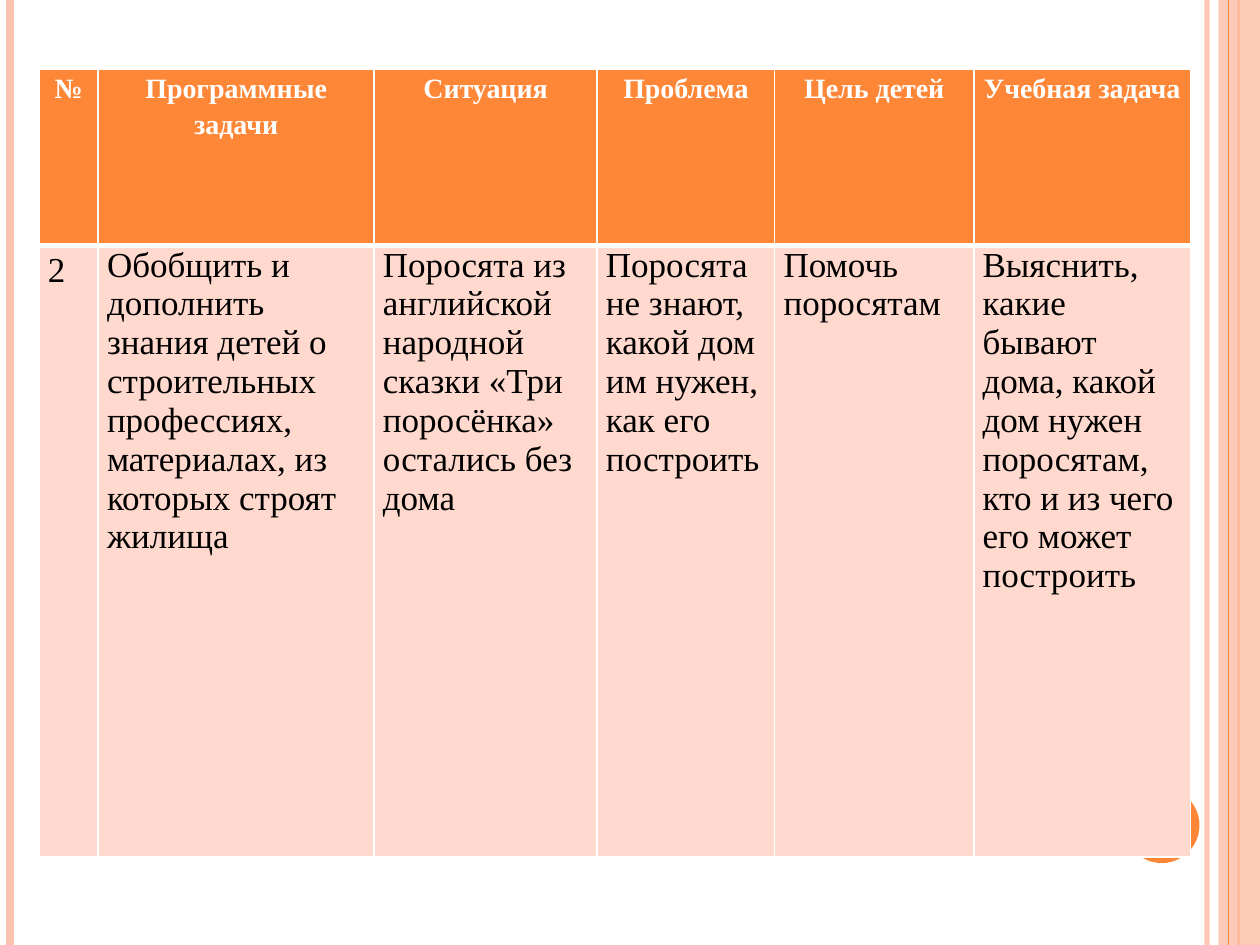
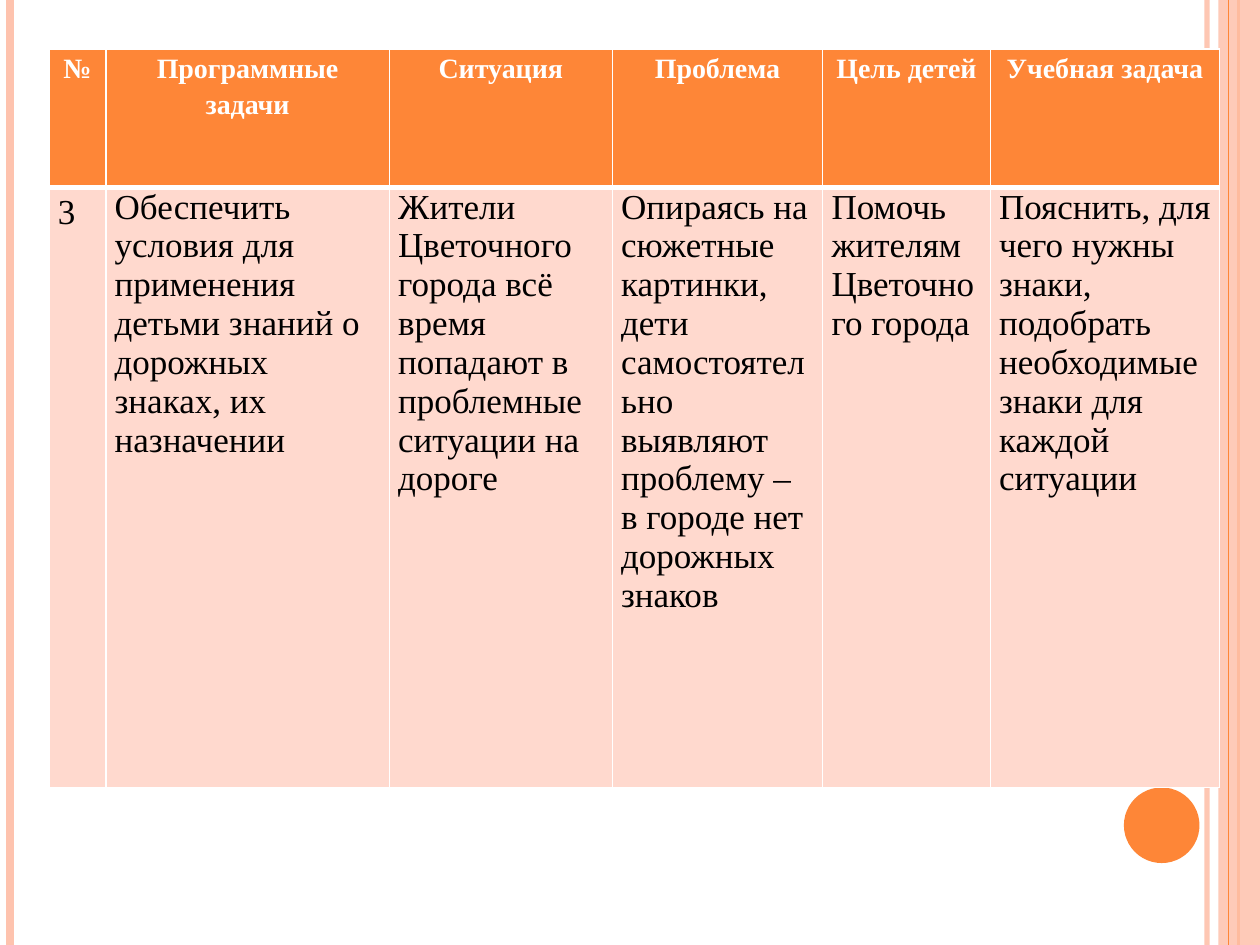
import pptx
import pptx.util
import pptx.dml.color
import pptx.enum.shapes
import pptx.enum.text
import pptx.oxml
import pptx.oxml.ns

COLOURS = {
    "orange": "FE8637",
    "peach": "FEC3AE",
    "pale": "FFD9CE",
    "white": "FFFFFF",
    "black": "000000",
}
FONT = "Times New Roman"

presentation = pptx.Presentation()
presentation.slide_width = pptx.util.Inches(10)
presentation.slide_height = pptx.util.Inches(7.5)

# Grid of square modules: 100 columns by 75 rows
column = presentation.slide_width / 100
row = presentation.slide_height / 75

# Side decoration, back to front
# Stripe: ("line", column, colour, points, opacity %)
# Shape: (preset, (left, top, width, height), colour, points, opacity %)
DECORATION = [
    ("line", 95.8, "peach", 3, 93),
    ("line", 0.8, "peach", 4.5, 100),
    ("line", 98.3, "orange", 1.5, 100),
    ("RECTANGLE", (96.7, 0, 3.3, 75), "peach", 0, 87),
    ("line", 97.5, "orange", 0.75, 100),
    ("OVAL", (89.2, 62.5, 6, 6), "orange", 0, 100),
]

HEADINGS = ["№", "Программные задачи", "Ситуация", "Проблема", "Цель детей", "Учебная задача"]

ROW_FORMATS = [
    {
        "fill": "orange",
        "font": {"size": pptx.util.Pt(16), "bold": True},
        "colour": "white",
        "alignment": pptx.enum.text.PP_ALIGN.CENTER,
        "borders": {"lnL": 1, "lnR": 1, "lnT": 1, "lnB": 3},
    },
    {
        "fill": "pale",
        "font": {"size": pptx.util.Pt(20), "bold": False},
        "colour": "black",
        "alignment": pptx.enum.text.PP_ALIGN.LEFT,
        "borders": {"lnL": 1, "lnR": 1, "lnT": 3, "lnB": 1},
    },
]
CELL_MARGINS = {
    "margin_left": pptx.util.Inches(0.07),
    "margin_right": pptx.util.Inches(0.07),
    "margin_top": 0,
    "margin_bottom": 0,
}

# Table positions and sizes are in grid columns and rows
TABLES = [
    {
        "corner": (3.1, 5.5),
        "widths": [4.7, 21.9, 17.7, 14.1, 15.8, 17.2],
        "heights": [14, 48.5],
        "answers": [
            "2",
            "Обобщить и дополнить знания детей о строительных профессиях, "
            "материалах, из которых строят жилища",
            "Поросята из английской народной сказки «Три поросёнка» остались без дома",
            "Поросята не знают, какой дом им нужен, как его построить",
            "Помочь поросятам",
            "Выяснить, какие бывают дома, какой дом нужен поросятам, "
            "кто и из чего его может построить",
        ],
    },
    {
        "corner": (3.9, 3.9),
        "widths": [4.5, 22.5, 17.7, 16.7, 13.3, 18.2],
        "heights": [11, 47.6],
        "answers": [
            "3",
            "Обеспечить условия для применения детьми знаний о дорожных знаках, их назначении",
            "Жители Цветочного города всё время попадают в проблемные ситуации на дороге",
            "Опираясь на сюжетные картинки, дети самостоятельно выявляют проблему – "
            "в городе нет дорожных знаков",
            "Помочь жителям Цветочного города",
            "Пояснить, для чего нужны знаки, подобрать необходимые знаки для каждой ситуации",
        ],
    },
]


def paint(fill, colour, element=None, opacity=100):
    """Fill with a solid colour; opacity below 100 is written into the element."""
    fill.solid()
    fill.fore_color.rgb = pptx.dml.color.RGBColor.from_string(COLOURS[colour])
    if opacity < 100:
        colour_element = next(element.iter(pptx.oxml.ns.qn("a:srgbClr")))
        alpha = colour_element.makeelement(pptx.oxml.ns.qn("a:alpha"), {"val": str(opacity * 1000)})
        colour_element.append(alpha)


def border(side, points):
    """Return a white cell border element."""
    return pptx.oxml.parse_xml(
        f'<a:{side} {pptx.oxml.ns.nsdecls("a")} w="{pptx.util.Pt(points)}"><a:solidFill>'
        f'<a:srgbClr val="{COLOURS["white"]}"/></a:solidFill></a:{side}>'
    )


for content in TABLES:
    slide = presentation.slides.add_slide(presentation.slide_layouts[6])
    paint(slide.background.fill, "white")

    # Stripes, band and disc
    for kind, place, colour, points, opacity in DECORATION:
        if kind == "line":
            x = round(place * column)
            shape = slide.shapes.add_connector(
                pptx.enum.shapes.MSO_CONNECTOR.STRAIGHT, x, 0, x, presentation.slide_height
            )
            shape.line.width = pptx.util.Pt(points)
            properties = shape._element.spPr
            paint(shape.line.fill, colour, properties, opacity)
            properties.append(properties.makeelement(pptx.oxml.ns.qn("a:effectLst"), {}))
        else:
            left, top, width, height = place
            shape = slide.shapes.add_shape(
                pptx.enum.shapes.MSO_SHAPE[kind],
                round(left * column), round(top * row),
                round(width * column), round(height * row),
            )
            shape.shadow.inherit = False
            shape.line.fill.background()
            paint(shape.fill, colour, shape._element.spPr, opacity)

    # Table frame
    left, top = content["corner"]
    table = slide.shapes.add_table(
        len(content["heights"]), len(HEADINGS),
        round(left * column), round(top * row),
        round(sum(content["widths"]) * column), round(sum(content["heights"]) * row),
    ).table
    table.horz_banding = False
    for table_column, width in zip(table.columns, content["widths"]):
        table_column.width = round(width * column)
    for table_row, height in zip(table.rows, content["heights"]):
        table_row.height = round(height * row)

    # Table cells
    for row_index, texts in enumerate([HEADINGS, content["answers"]]):
        row_format = ROW_FORMATS[row_index]
        for column_index, text in enumerate(texts):
            cell = table.cell(row_index, column_index)
            for name, value in CELL_MARGINS.items():
                setattr(cell, name, value)
            paint(cell.fill, row_format["fill"])
            cell_properties = cell._tc.get_or_add_tcPr()
            for position, (side, points) in enumerate(row_format["borders"].items()):
                cell_properties.insert(position, border(side, points))

            paragraph = cell.text_frame.paragraphs[0]
            paragraph.alignment = row_format["alignment"]
            # Headings and the row number are set more loosely than the answers
            paragraph.line_spacing = 1.15 if row_index == 0 or column_index == 0 else 1.0
            run = paragraph.add_run()
            run.text = text
            run.font.name = FONT
            for name, value in row_format["font"].items():
                setattr(run.font, name, value)
            paint(run.font.fill, row_format["colour"])

presentation.save("out.pptx")
